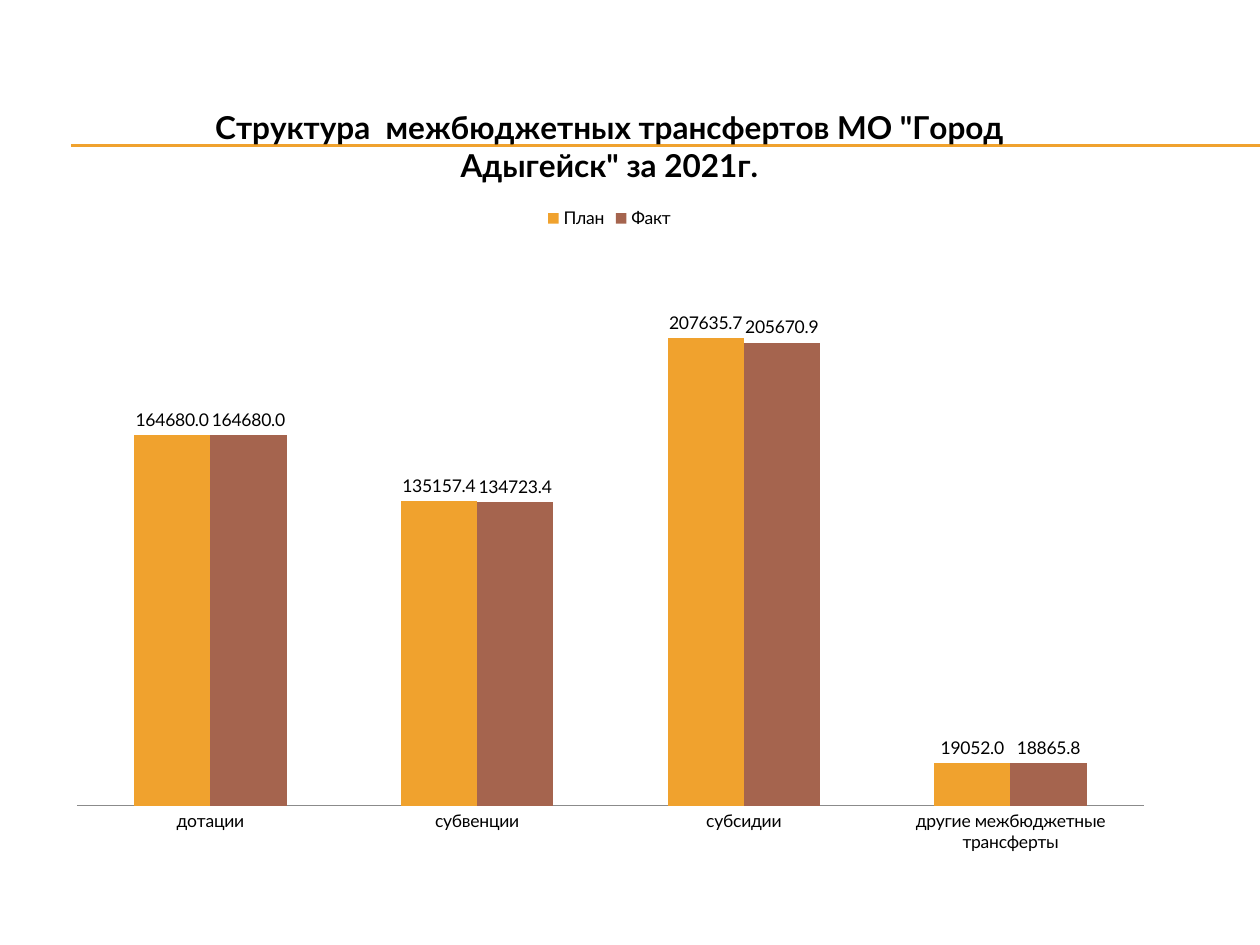
from dataclasses import dataclass

from lxml.etree import SubElement
from pptx import Presentation
from pptx.chart.chart import Chart
from pptx.chart.data import CategoryChartData
from pptx.dml.color import RGBColor
from pptx.enum.chart import XL_CHART_TYPE as ChartType
from pptx.enum.chart import XL_LABEL_POSITION as LabelPosition
from pptx.enum.chart import XL_LEGEND_POSITION as LegendPosition
from pptx.enum.chart import XL_TICK_MARK as TickMark
from pptx.enum.shapes import MSO_CONNECTOR as Connector
from pptx.oxml.ns import qn
from pptx.slide import Slide
from pptx.util import Emu, Inches, Pt

PX_PER_INCH = 126
WIDTH, HEIGHT = 1260, 945
FONT = "Lato"
BLACK, GOLD, BROWN, GREY = "000000", "F0A22E", "A5644E", "8B8B8B"
NUMBER_FORMAT = "0.0"
TITLE = 'Структура  межбюджетных трансфертов МО "Город Адыгейск" за 2021г.'
TRANSFERS = ["дотации", "субвенции", "субсидии", "другие межбюджетные трансферты"]


@dataclass(frozen=True)
class Box:
    left: int
    top: int
    width: int
    height: int


@dataclass(frozen=True)
class Budget:
    name: str
    amounts: tuple[float, ...]
    color: str


BUDGETS = [
    Budget("План", (164680, 135157.4, 207635.7, 19052), GOLD),
    Budget("Факт", (164680, 134723.4, 205670.9, 18865.8), BROWN),
]
CHART_BOX = Box(54, 76, 1111, 794)
PLOT_BOX = Box(77, 243, 1067, 563)
RULE_LEFT = 71
RULE_TOPS = (145, 146)


def px(length: int) -> Emu:
    return Inches(length / PX_PER_INCH)


def rgb(color: str) -> RGBColor:
    return RGBColor.from_string(color)


def style_font(font, size: int, bold: bool = False) -> None:
    font.name = FONT
    font.size = Pt(size)
    font.bold = bold
    font.color.rgb = rgb(BLACK)


def add_rule(slide: Slide, top: int) -> None:
    rule = slide.shapes.add_connector(
        Connector.STRAIGHT, px(RULE_LEFT), px(top), px(WIDTH), px(top)
    )
    rule.line.color.rgb = rgb(GOLD)
    rule.line.width = Pt(0.75)
    SubElement(rule._element.spPr, qn("a:effectLst"))


def place_plot(chart: Chart, plot: Box, frame: Box) -> None:
    """Fix the inner plot area, as fractions of the chart frame."""
    area = chart._chartSpace.chart.plotArea
    for old in area.findall(qn("c:layout")):
        area.remove(old)
    layout = SubElement(area, qn("c:layout"))
    area.insert(0, layout)
    manual = SubElement(layout, qn("c:manualLayout"))
    settings = {
        "layoutTarget": "inner",
        "xMode": "edge",
        "yMode": "edge",
        "x": round((plot.left - frame.left) / frame.width, 4),
        "y": round((plot.top - frame.top) / frame.height, 4),
        "w": round(plot.width / frame.width, 4),
        "h": round(plot.height / frame.height, 4),
    }
    for tag, setting in settings.items():
        SubElement(manual, qn(f"c:{tag}")).set("val", str(setting))


def style_axes(chart: Chart) -> None:
    categories = chart.category_axis
    categories.major_tick_mark = TickMark.NONE
    categories.minor_tick_mark = TickMark.NONE
    categories.has_major_gridlines = False
    categories.format.line.color.rgb = rgb(GREY)
    categories.format.line.width = Pt(0.75)

    amounts = chart.value_axis
    amounts.minimum_scale = 0
    amounts.maximum_scale = 250000
    amounts.has_major_gridlines = False
    amounts.tick_labels.number_format = NUMBER_FORMAT
    amounts.tick_labels.number_format_is_linked = False
    amounts.visible = False


def style_bars(chart: Chart, budgets: list[Budget]) -> None:
    bars = chart.plots[0]
    bars.gap_width = 150
    bars.overlap = 0
    bars.vary_by_categories = False
    for series, budget in zip(bars.series, budgets):
        series.format.fill.solid()
        series.format.fill.fore_color.rgb = rgb(budget.color)
        series.invert_if_negative = False
        labels = series.data_labels
        labels.show_value = True
        labels.number_format = NUMBER_FORMAT
        labels.number_format_is_linked = False
        labels.position = LabelPosition.OUTSIDE_END
        style_font(labels.font, 10)


def add_transfers_chart(slide: Slide, box: Box, budgets: list[Budget]) -> None:
    data = CategoryChartData(number_format=NUMBER_FORMAT)
    data.categories = TRANSFERS
    for budget in budgets:
        data.add_series(budget.name, budget.amounts)
    chart = slide.shapes.add_chart(
        ChartType.COLUMN_CLUSTERED,
        px(box.left), px(box.top), px(box.width), px(box.height),
        data,
    ).chart
    style_font(chart.font, 10)

    chart.has_title = True
    heading = chart.chart_title.text_frame
    heading.text = TITLE
    style_font(heading.paragraphs[0].font, 18, bold=True)
    chart.chart_title.include_in_layout = False

    chart.has_legend = True
    chart.legend.position = LegendPosition.TOP
    chart.legend.include_in_layout = False

    style_axes(chart)
    style_bars(chart, budgets)
    place_plot(chart, PLOT_BOX, box)


def main() -> None:
    deck = Presentation()
    deck.slide_width, deck.slide_height = px(WIDTH), px(HEIGHT)
    blank_layout = deck.slide_layouts[6]
    slide = deck.slides.add_slide(blank_layout)
    for top in RULE_TOPS:
        add_rule(slide, top)
    add_transfers_chart(slide, CHART_BOX, BUDGETS)
    deck.save("out.pptx")


if __name__ == "__main__":
    main()
